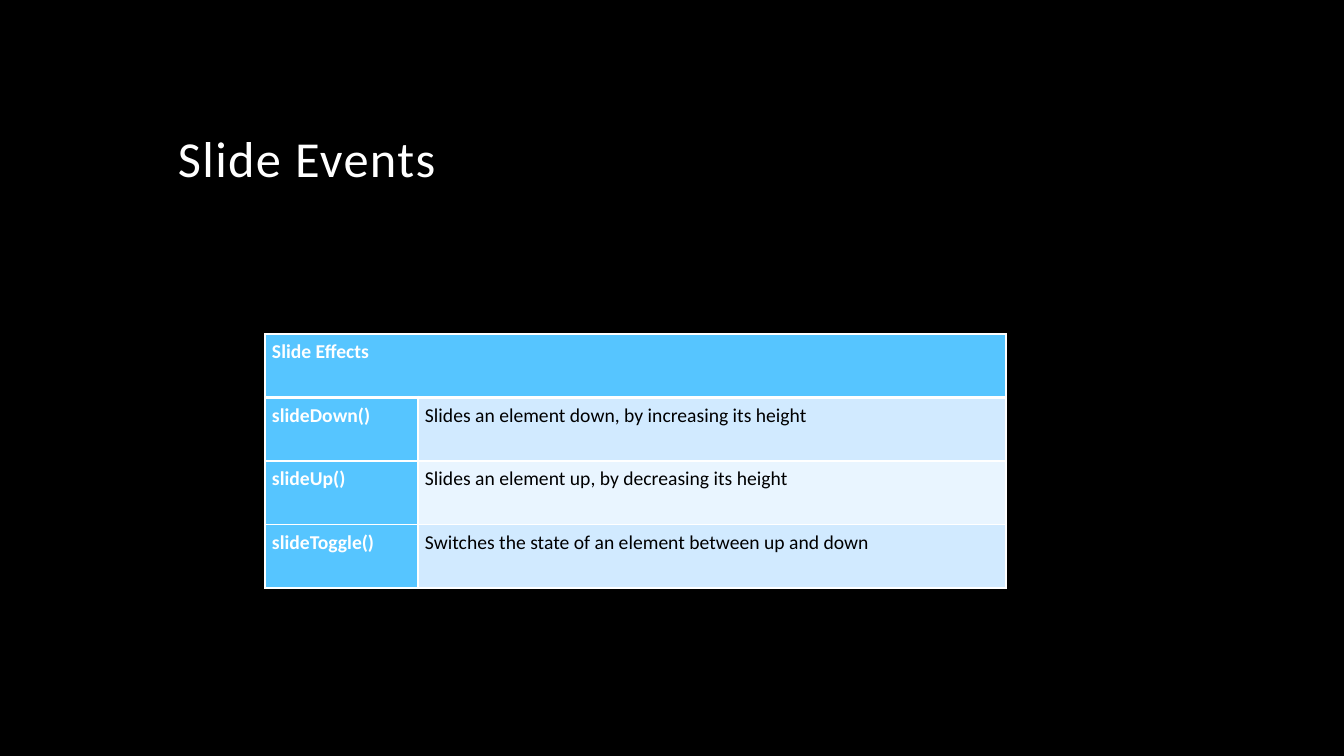
from dataclasses import dataclass

from lxml.etree import SubElement
from pptx import Presentation
from pptx.dml.color import RGBColor as RGB
from pptx.enum.text import MSO_ANCHOR as Anchor, PP_ALIGN as Align
from pptx.oxml.ns import qn
from pptx.util import Pt

PX = 914400 / 100.8


@dataclass(frozen=True)
class Theme:
    font: str = "Calibri"
    title_size: int = 36
    table_size: int = 14
    background: str = "000000"
    light: str = "FFFFFF"
    dark: str = "000000"
    accent: str = "56C5FF"
    bands: tuple = ("D1EAFF", "E9F5FF")


THEME = Theme()
EFFECTS = [
    ("slideDown()", "Slides an element down, by increasing its height"),
    ("slideUp()", "Slides an element up, by decreasing its height"),
    ("slideToggle()", "Switches the state of an element between up and down"),
]


def px(length):
    return round(length * PX)


def write(frame, text, size, color=THEME.light, bold=False, align=Align.LEFT,
          line_spacing=1.0, tracking=0):
    para = frame.paragraphs[0]
    para.alignment = align
    para.line_spacing = line_spacing
    span = para.add_run()
    span.text = text
    span.font.name = THEME.font
    span.font.size = Pt(size)
    span.font.bold = bold
    span.font.color.rgb = RGB.from_string(color)
    if tracking:
        span.font._element.set("spc", str(tracking * 100))


def set_borders(cell, top=1, bottom=1):
    properties = cell._tc.get_or_add_tcPr()
    for side, width in (("L", 1), ("R", 1), ("T", top), ("B", bottom)):
        line = SubElement(properties, qn(f"a:ln{side}"), w=str(Pt(width)))
        fill = SubElement(line, qn("a:solidFill"))
        SubElement(fill, qn("a:srgbClr"), val=THEME.light)


def style_cell(cell, fill, top=1, bottom=1):
    set_borders(cell, top, bottom)
    cell.fill.solid()
    cell.fill.fore_color.rgb = RGB.from_string(fill)
    cell.margin_left = cell.margin_right = px(7)
    cell.margin_top = cell.margin_bottom = 0


def add_title(page, left, top, width, height):
    box = page.shapes.add_textbox(px(left), px(top), px(width), px(height))
    frame = box.text_frame
    frame.word_wrap = True
    frame.vertical_anchor = Anchor.BOTTOM
    write(frame, "Slide Events", THEME.title_size, line_spacing=0.9, tracking=1)


def add_effects_table(page, left, top, width, height, name_width):
    row_count = len(EFFECTS) + 1
    table = page.shapes.add_table(
        row_count, 2, px(left), px(top), px(width), px(height)).table
    table.first_row = table.horz_banding = False
    for column, column_width in zip(table.columns, (name_width, width - name_width)):
        column.width = px(column_width)
    for row in table.rows:
        row.height = px(height / row_count)

    cell_text = dict(size=THEME.table_size, align=Align.JUSTIFY, line_spacing=1.25)

    # Heading across both columns
    heading = table.cell(0, 0)
    heading.merge(table.cell(0, 1))
    for column in range(2):
        style_cell(table.cell(0, column), THEME.accent, bottom=3)
    write(heading.text_frame, "Slide Effects", bold=True, **cell_text)

    # One row per effect, with alternating bands
    for index, (name, description) in enumerate(EFFECTS):
        name_cell, description_cell = table.rows[index + 1].cells
        top_line = 1 if index else 3
        style_cell(name_cell, THEME.accent, top=top_line)
        style_cell(description_cell, THEME.bands[index % 2], top=top_line)
        write(name_cell.text_frame, name, bold=True, **cell_text)
        write(description_cell.text_frame, description, color=THEME.dark, **cell_text)


def main():
    deck = Presentation()
    deck.slide_width, deck.slide_height = px(1344), px(756)
    page = deck.slides.add_slide(deck.slide_layouts[6])
    page.background.fill.solid()
    page.background.fill.fore_color.rgb = RGB.from_string(THEME.background)
    add_title(page, 168, 42, 1008, 151)
    add_effects_table(page, 265, 334, 741, 254, name_width=153)
    deck.save("out.pptx")


if __name__ == "__main__":
    main()
